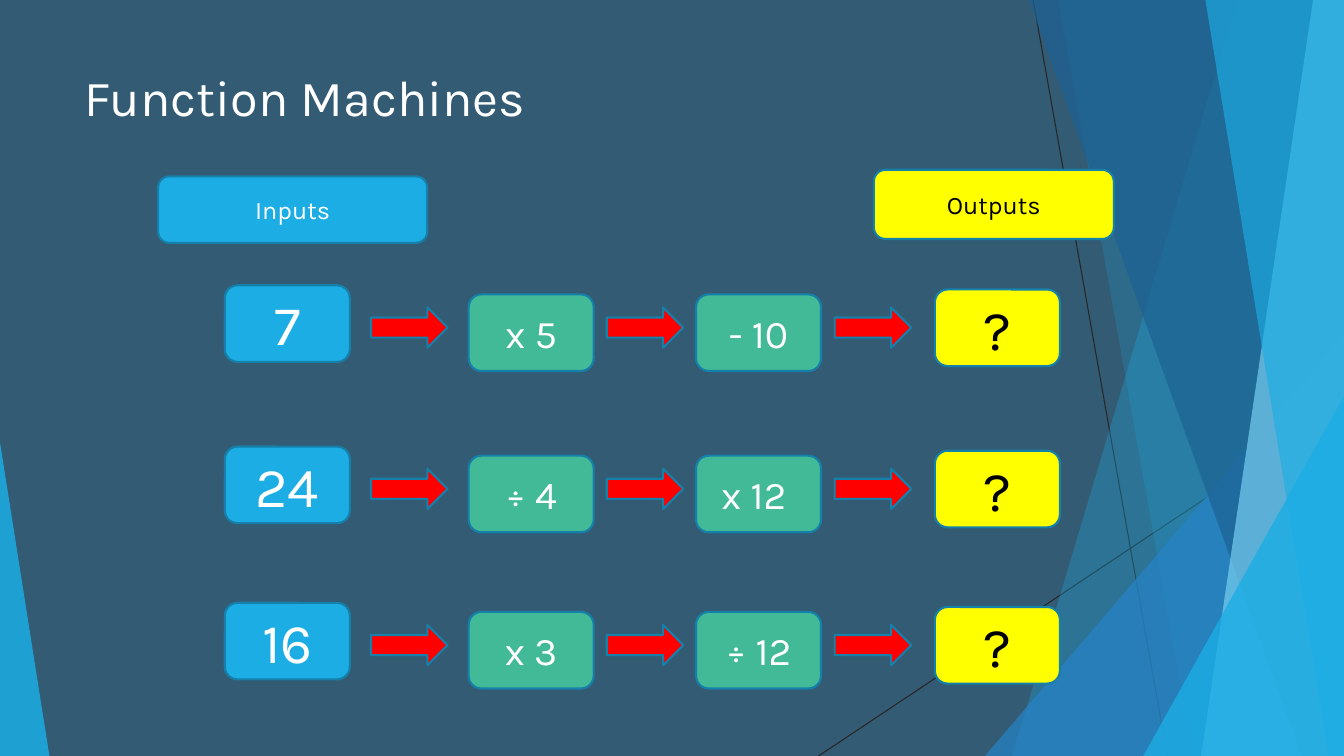
from lxml import etree
from pptx import Presentation
from pptx.dml.color import RGBColor
from pptx.enum.shapes import MSO_CONNECTOR, MSO_SHAPE
from pptx.enum.text import MSO_ANCHOR, MSO_AUTO_SIZE, PP_ALIGN
from pptx.oxml.ns import qn
from pptx.util import Pt

ROUND = MSO_SHAPE.ROUNDED_RECTANGLE
ARROW = MSO_SHAPE.RIGHT_ARROW
WEDGE = MSO_SHAPE.ISOSCELES_TRIANGLE
STRAIGHT = MSO_CONNECTOR.STRAIGHT
MIDDLE = MSO_ANCHOR.MIDDLE
LEFT, CENTER = PP_ALIGN.LEFT, PP_ALIGN.CENTER
FIXED = MSO_AUTO_SIZE.NONE

SLATE = RGBColor(0x33, 0x5B, 0x74)
SKY = RGBColor(0x1C, 0xAD, 0xE4)
BLUE = RGBColor(0x26, 0x83, 0xC6)
NAVY = RGBColor(0x1D, 0x62, 0x94)
PALE = RGBColor(0x77, 0xCE, 0xEF)
EDGE = RGBColor(0x15, 0x80, 0xA9)
GREEN = RGBColor(0x42, 0xBA, 0x97)
YELLOW = RGBColor(0xFF, 0xFF, 0x00)
RED = RGBColor(0xFF, 0x00, 0x00)
DARK = RGBColor(0x26, 0x26, 0x26)
WHITE = RGBColor(0xFF, 0xFF, 0xFF)
BLACK = RGBColor(0x00, 0x00, 0x00)

WIDTH, HEIGHT = 960, 540


class Page:
    """Draws styled elements on one slide, with lengths in points."""

    def __init__(self, slide, font):
        self.slide = slide
        self.shapes = slide.shapes
        self.font = font
        slide.background.fill.solid()
        slide.background.fill.fore_color.rgb = SLATE

    def label(self, frame, text, size, color, align):
        frame.text = text
        frame.word_wrap = True
        frame.auto_size = FIXED
        frame.vertical_anchor = MIDDLE
        line = frame.paragraphs[0]
        line.alignment = align
        line.font.name = self.font
        line.font.size = Pt(size)
        line.font.color.rgb = color

    def title(self, text, x, y, w, h):
        head = self.shapes.title
        head.left, head.top, head.width, head.height = Pt(x), Pt(y), Pt(w), Pt(h)
        self.label(head.text_frame, text, 36, WHITE, LEFT)

    def line(self, x1, y1, x2, y2):
        rule = self.shapes.add_connector(STRAIGHT, Pt(x1), Pt(y1), Pt(x2), Pt(y2))
        rule.line.color.rgb = DARK
        rule.line.width = Pt(0.75)
        etree.SubElement(rule._element.spPr, qn("a:effectLst"))

    def tint(self, shape, color, alpha):
        shape.shadow.inherit = False
        shape.line.fill.background()
        shape.fill.solid()
        shape.fill.fore_color.rgb = color
        tone = shape._element.spPr.find(qn("a:solidFill"))[0]
        etree.SubElement(tone, qn("a:alpha"), val=str(alpha * 1000))

    def band(self, top, foot, color, alpha):
        shape = self.shapes.build_freeform(top, 0, scale=Pt(1))
        shape.add_line_segments([(WIDTH, 0), (WIDTH, HEIGHT), (foot, HEIGHT)])
        self.tint(shape.convert_to_shape(), color, alpha)

    def wedge(self, x, y, w, apex, color, alpha):
        shape = self.shapes.add_shape(WEDGE, Pt(x), Pt(y), Pt(w), Pt(HEIGHT - y))
        shape.adjustments[0] = apex
        self.tint(shape, color, alpha)

    def block(self, kind, x, y, w, h, fill):
        shape = self.shapes.add_shape(kind, Pt(x), Pt(y), Pt(w), Pt(h))
        shape.shadow.inherit = False
        shape.fill.solid()
        shape.fill.fore_color.rgb = fill
        shape.line.color.rgb = EDGE
        shape.line.width = Pt(1.5)
        return shape

    def box(self, text, x, y, fill, size, color=WHITE, w=89.3, h=54.7):
        shape = self.block(ROUND, x, y, w, h, fill)
        self.label(shape.text_frame, text, size, color, CENTER)

    def arrow(self, x, y):
        self.block(ARROW, x, y, 54.7, 28.8, RED)

    def machine(self, y, start, first, second):
        self.box(start, 160.6, y, SKY, 40)
        self.box(first, 334.8, y + 6.5, GREEN, 28)
        self.box(second, 497.2, y + 6.5, GREEN, 28)
        self.box("?", 667.8, y + 3, YELLOW, 40, BLACK)
        for x in (265, 433.4, 596.2):
            self.arrow(x, y + 15.8)


def main():
    deck = Presentation()
    deck.slide_width, deck.slide_height = Pt(WIDTH), Pt(HEIGHT)
    page = Page(deck.slides.add_slide(deck.slide_layouts[5]), "Karla")

    page.line(738, 0, 833.8, HEIGHT)
    page.line(WIDTH, 290.2, 584.6, HEIGHT)
    page.band(884.2, 722.9, SKY, 30)
    page.band(756, 851.8, SKY, 20)
    page.wedge(703.5, 239.8, 256.5, 1, BLUE, 72)
    page.band(735.1, 929.5, NAVY, 70)
    page.band(938.2, 858.2, PALE, 70)
    page.band(861.1, 949, SKY, 65)
    page.wedge(816.6, 283, 143.4, 1, SKY, 80)
    page.wedge(0, 316, 35.3, 0, SKY, 85)

    page.title("Function Machines", 53.3, 17.3, 676.8, 103.7)
    page.box("Inputs", 113, 126, SKY, 18, w=192.2, h=47.5)
    page.box("Outputs", 624.2, 121.3, YELLOW, 18, BLACK, w=171.4, h=49.4)
    page.machine(203.8, "7", "x 5", "- 10")
    page.machine(319, "24", "÷ 4", "x 12 ")
    page.machine(430.6, "16", "x 3", "÷ 12")

    deck.save("out.pptx")


if __name__ == "__main__":
    main()
